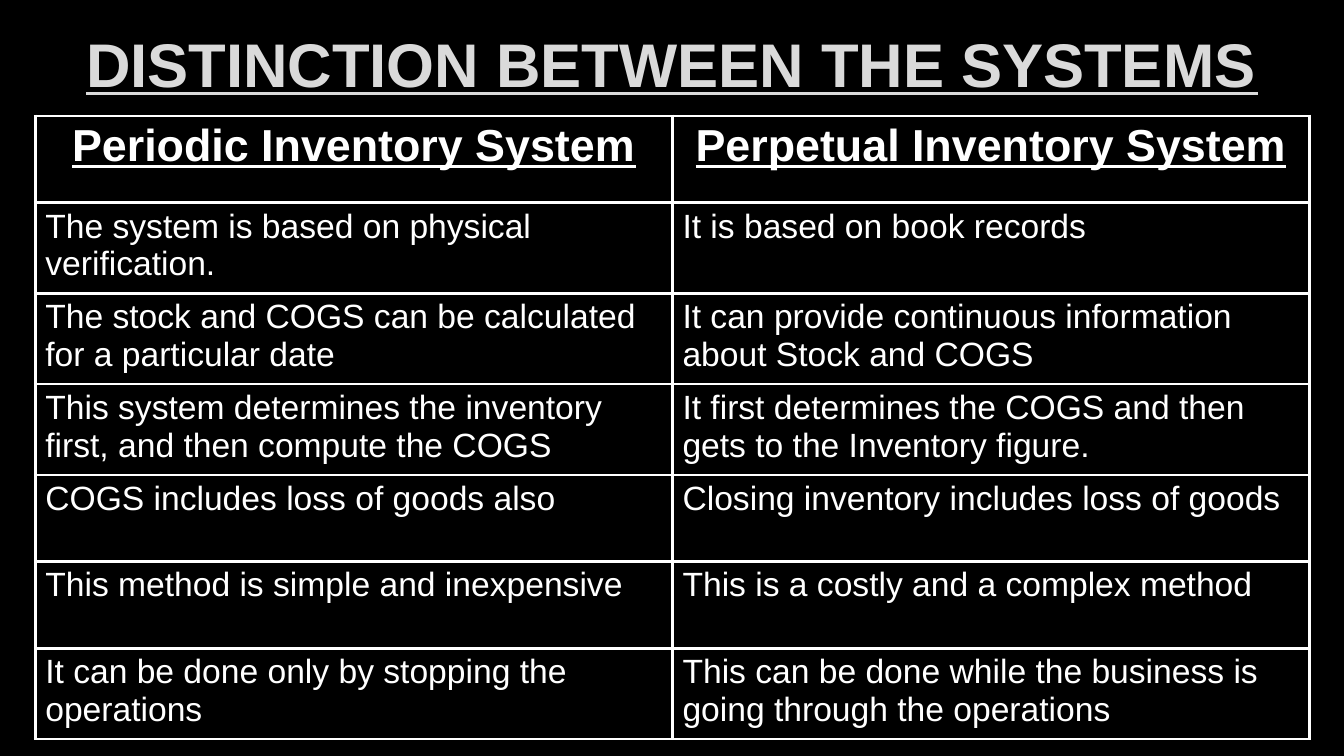
from lxml import etree
from pptx import Presentation
from pptx import util as u
from pptx.dml.color import RGBColor
from pptx.enum import text
from pptx.oxml.ns import qn

PX = 9144  # EMU per px, 100 px to the inch
BLACK, WHITE, SILVER = "000000", "FFFFFF", "DADADA"

ROWS = [
    ("Periodic Inventory System", "Perpetual Inventory System"),
    ("The system is based on physical verification.",
     "It is based on book records"),
    ("The stock and COGS can be calculated for a particular date",
     "It can provide continuous information about Stock and COGS"),
    ("This system determines the inventory first, and then compute the COGS",
     "It first determines the COGS and then gets to the Inventory figure."),
    ("COGS includes loss of goods also",
     "Closing inventory includes loss of goods"),
    ("This method is simple and inexpensive",
     "This is a costly and a complex method"),
    ("It can be done only by stopping the operations",
     "This can be done while the business is going through the operations"),
]


def px(*lengths):
    return [u.Emu(length * PX) for length in lengths]


def paint(fill, color):
    fill.solid()
    fill.fore_color.rgb = RGBColor.from_string(color)


def write(frame, words, size, color=WHITE, heading=False):
    """Put words in a text frame; a heading is centred, bold and underlined."""
    frame.word_wrap = True
    paragraph = frame.paragraphs[0]
    paragraph.alignment = text.PP_ALIGN.CENTER if heading else text.PP_ALIGN.LEFT
    run = paragraph.add_run()
    run.text = words
    font = run.font
    font.name, font.size = "Arial", u.Pt(size)
    font.bold = font.underline = heading
    font.color.rgb = RGBColor.from_string(color)


def add_borders(cell, color, width):
    properties = cell._tc.get_or_add_tcPr()
    for position, side in enumerate(("lnL", "lnR", "lnT", "lnB")):
        line = etree.Element(qn(f"a:{side}"), w=str(u.Pt(width)))
        fill = etree.SubElement(line, qn("a:solidFill"))
        etree.SubElement(fill, qn("a:srgbClr"), val=color)
        properties.insert(position, line)


def add_title(slide, words):
    shape = slide.shapes.add_textbox(*px(0, 9, 1333, 106))
    shape.text_frame.vertical_anchor = text.MSO_ANCHOR.MIDDLE
    write(shape.text_frame, words, 44, color=SILVER, heading=True)


def add_comparison(slide, rows):
    shape = slide.shapes.add_table(len(rows), 2, *px(35, 115, 1264, 86 * len(rows)))
    for row_index, row in enumerate(rows):
        heading = row_index == 0
        for column_index, words in enumerate(row):
            cell = shape.table.cell(row_index, column_index)
            paint(cell.fill, BLACK)
            add_borders(cell, WHITE, 2.25)
            write(cell.text_frame, words, 32 if heading else 24, heading=heading)


def main():
    presentation = Presentation()
    presentation.slide_width, presentation.slide_height = px(1333, 750)
    slide = presentation.slides.add_slide(presentation.slide_layouts[6])
    paint(slide.background.fill, BLACK)
    add_title(slide, "DISTINCTION BETWEEN THE SYSTEMS")
    add_comparison(slide, ROWS)
    presentation.save("out.pptx")


if __name__ == "__main__":
    main()
